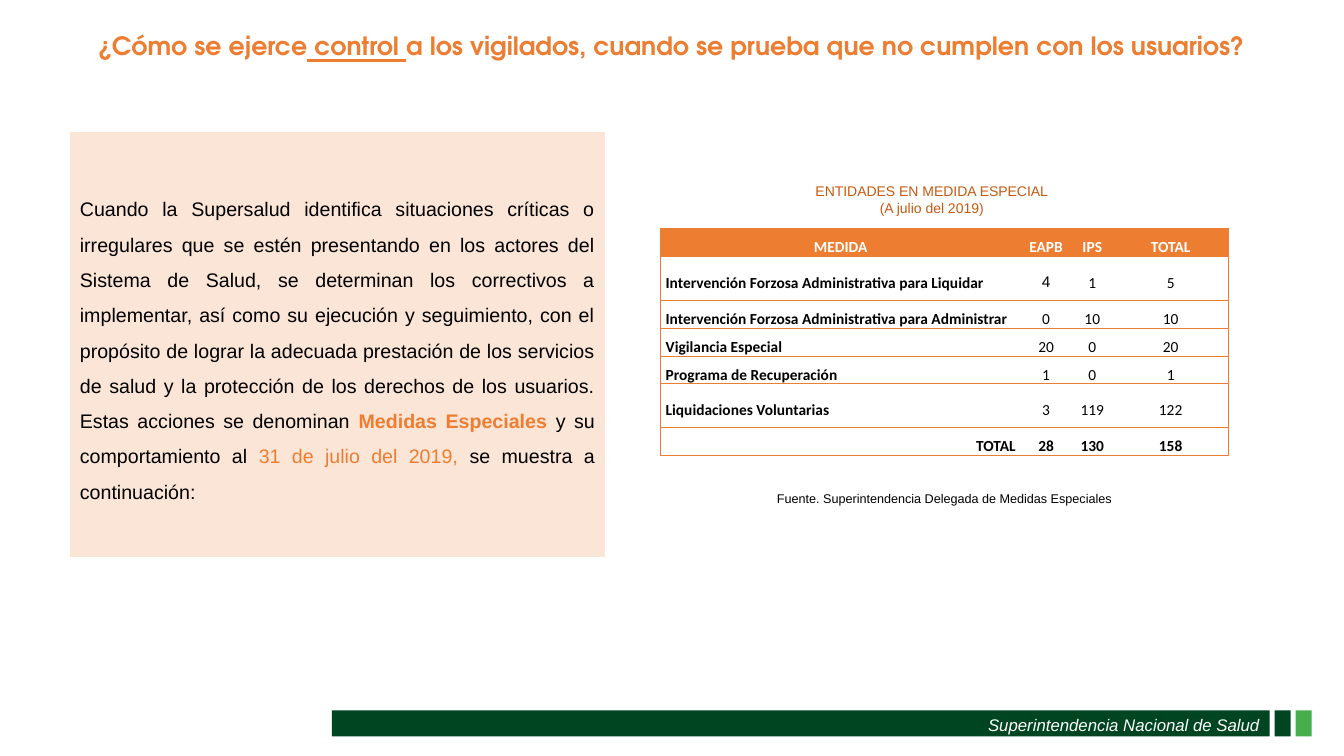
from lxml.etree import SubElement
from pptx import Presentation
from pptx.dml.color import RGBColor
from pptx.enum.shapes import MSO_SHAPE
from pptx.enum.text import MSO_ANCHOR, MSO_AUTO_SIZE, PP_ALIGN
from pptx.oxml.ns import qn
from pptx.util import Pt

COLORS = {"orange": "ED7D31", "dark orange": "C55A11", "peach": "FBE5D6",
          "dark green": "004521", "green": "46AE4C", "black": "000000", "white": "FFFFFF"}

COLUMN_WIDTHS = [257, 36.5, 29.5, 82.5]
ROW_HEIGHTS = [20, 31.5, 19.8, 19.8, 19.8, 31.5, 19.8]
MEASURES = [
    ("MEDIDA", "EAPB", "IPS", "TOTAL"),
    ("Intervención Forzosa Administrativa para Liquidar", "4", "1", "5"),
    ("Intervención Forzosa Administrativa para Administrar", "0", "10", "10"),
    ("Vigilancia Especial", "20", "0", "20"),
    ("Programa de Recuperación", "1", "0", "1"),
    ("Liquidaciones Voluntarias", "3", "119", "122"),
    ("TOTAL", "28", "130", "158"),
]


def color(name):
    return RGBColor.from_string(COLORS[name])


def set_format(target, **values):
    for name, value in values.items():
        setattr(target, name, value)


def add_run(paragraph, text, color_name, **font_values):
    run = paragraph.add_run()
    run.text = text
    run.font.color.rgb = color(color_name)
    set_format(run.font, **font_values)


def add_filled_shape(slide, preset, box, color_name):
    shape = slide.shapes.add_shape(preset, *map(Pt, box))
    shape.shadow.inherit = False
    shape.fill.solid()
    shape.fill.fore_color.rgb = color(color_name)
    shape.line.fill.background()
    return shape


def add_label(slide, box, lines, color_name, alignment, **font_values):
    frame = slide.shapes.add_textbox(*map(Pt, box)).text_frame
    set_format(frame, word_wrap=True, vertical_anchor=MSO_ANCHOR.MIDDLE)
    for index, line in enumerate(lines):
        paragraph = frame.add_paragraph() if index else frame.paragraphs[0]
        paragraph.alignment = alignment
        add_run(paragraph, line, color_name, name="Arial", **font_values)


def add_footer(slide, left, top, width, height):
    # Bar with the institution name, then two small blocks
    block, gap = 11.5, 3.5
    bar_width = width - 2 * (block + gap)
    add_filled_shape(slide, MSO_SHAPE.RECTANGLE, (left, top, bar_width, height), "dark green")
    for index, name in enumerate(("dark green", "green")):
        block_left = left + bar_width + gap + index * (block + gap)
        add_filled_shape(slide, MSO_SHAPE.RECTANGLE, (block_left, top, block, height), name)
    add_label(slide, (left + bar_width - 230, top - 0.5, 230, 21.5),
              ["Superintendencia Nacional de Salud"], "white", PP_ALIGN.RIGHT,
              size=Pt(12), italic=True)


def add_title(slide, left, top, width, height):
    title = slide.shapes.title
    set_format(title, left=Pt(left), top=Pt(top), width=Pt(width), height=Pt(height))
    frame = title.text_frame
    set_format(frame, word_wrap=True, auto_size=MSO_AUTO_SIZE.NONE,
               vertical_anchor=MSO_ANCHOR.TOP)
    paragraph = frame.paragraphs[0]
    paragraph.alignment = PP_ALIGN.CENTER
    for text, underline in (
            ("¿Cómo se ejerce", False), (" control ", True),
            ("a los vigilados, cuando se prueba que no cumplen con los usuarios?", False)):
        add_run(paragraph, text, "orange", name="TeX Gyre Adventor", size=Pt(18),
                bold=True, underline=underline)


def add_explanation(slide, left, top, width, height):
    panel = add_filled_shape(slide, MSO_SHAPE.LINE_CALLOUT_3_ACCENT_BAR,
                             (left, top, width, height), "peach")
    frame = panel.text_frame
    set_format(frame, word_wrap=True, vertical_anchor=MSO_ANCHOR.MIDDLE)
    paragraph = frame.paragraphs[0]
    set_format(paragraph, alignment=PP_ALIGN.JUSTIFY, line_spacing=1.5)
    for text, color_name, bold in (
            ("Cuando la Supersalud identifica situaciones críticas o irregulares que se estén "
             "presentando en los actores del Sistema de Salud, se determinan los correctivos a "
             "implementar, así como su ejecución y seguimiento, con el propósito de lograr la "
             "adecuada prestación de los servicios de salud y la protección de los derechos de "
             "los usuarios. Estas acciones se denominan ", "black", False),
            ("Medidas Especiales ", "orange", True),
            ("y su comportamiento al ", "black", False),
            ("31 de julio del 2019, ", "orange", False),
            ("se muestra a continuación:", "black", False)):
        add_run(paragraph, text, color_name, name="Arial", size=Pt(14), bold=bold)


def set_borders(cell, visible_sides):
    # Border elements come before the fill in the cell properties
    properties = cell._tc.get_or_add_tcPr()
    for index, side in enumerate("LRTB"):
        line = SubElement(properties, qn(f"a:ln{side}"), w=str(Pt(0.5)))
        if side in visible_sides:
            fill = SubElement(line, qn("a:solidFill"))
            SubElement(fill, qn("a:srgbClr"), val=COLORS["orange"])
        else:
            SubElement(line, qn("a:noFill"))
        properties.insert(index, line)


def add_measures_table(slide, left, top):
    last_row, last_column = len(MEASURES) - 1, len(COLUMN_WIDTHS) - 1
    table = slide.shapes.add_table(
        len(MEASURES), len(COLUMN_WIDTHS), Pt(left), Pt(top),
        Pt(sum(COLUMN_WIDTHS)), Pt(sum(ROW_HEIGHTS))).table
    table.horz_banding = False
    for column, width in zip(table.columns, COLUMN_WIDTHS):
        column.width = Pt(width)
    for row_index, values in enumerate(MEASURES):
        table.rows[row_index].height = Pt(ROW_HEIGHTS[row_index])
        header, total = row_index == 0, row_index == last_row
        for column_index, value in enumerate(values):
            first = column_index == 0
            cell = table.cell(row_index, column_index)
            set_format(cell, vertical_anchor=MSO_ANCHOR.MIDDLE, margin_left=Pt(3.5),
                       margin_right=Pt(3.5), margin_top=0, margin_bottom=0)
            cell.fill.solid()
            cell.fill.fore_color.rgb = color("orange" if header else "white")
            set_borders(cell, "TB" + "L" * first + "R" * (column_index == last_column))
            paragraph = cell.text_frame.paragraphs[0]
            alignment = PP_ALIGN.CENTER
            if first and not header:
                alignment = PP_ALIGN.RIGHT if total else PP_ALIGN.JUSTIFY
            set_format(paragraph, alignment=alignment, line_spacing=1.5)
            font_name = "Arial" if (row_index, column_index) == (1, 1) else "Calibri"
            add_run(paragraph, value, "white" if header else "black", name=font_name,
                    size=Pt(11), bold=header or total or first)


def add_measures(slide, left, top):
    # Heading, table and source note
    add_label(slide, (left + 72, top, 243, 23),
              ["ENTIDADES EN MEDIDA ESPECIAL", "(A julio del 2019)"],
              "dark orange", PP_ALIGN.CENTER, size=Pt(10))
    add_measures_table(slide, left, top + 32)
    add_label(slide, (left + 70, top + 216, 265, 18),
              ["Fuente. Superintendencia Delegada de Medidas Especiales"],
              "black", PP_ALIGN.CENTER, size=Pt(9))


def main():
    presentation = Presentation()
    set_format(presentation, slide_width=Pt(960), slide_height=Pt(540))
    slide = presentation.slides.add_slide(presentation.slide_layouts[5])
    add_footer(slide, 237, 507.5, 700, 18.5)
    add_title(slide, 18, 18, 923, 29)
    add_explanation(slide, 50, 94.5, 382, 303)
    add_measures(slide, 472, 131)
    presentation.save("out.pptx")


if __name__ == "__main__":
    main()
